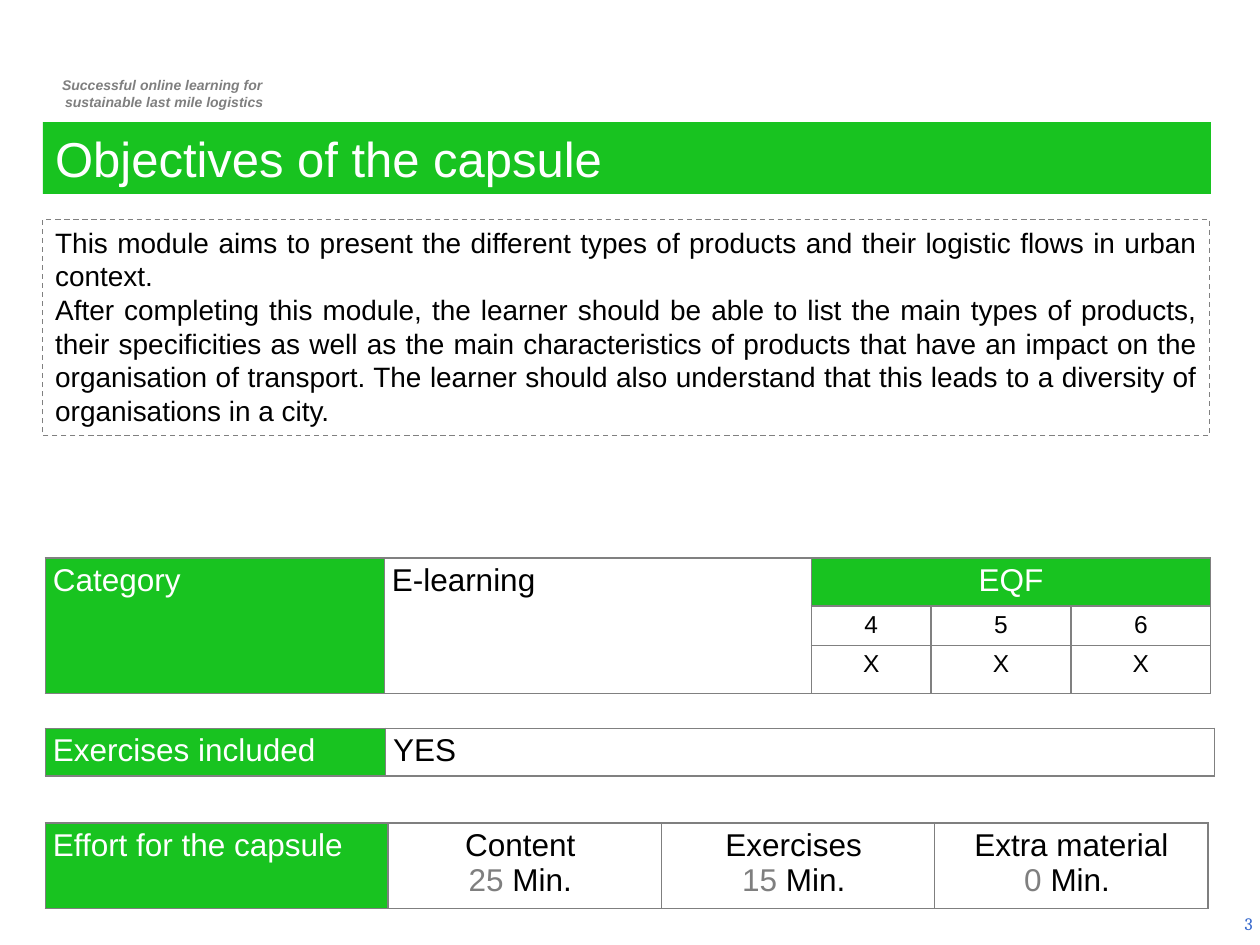
from lxml import etree
from pptx import Presentation, util as u
from pptx.dml.color import RGBColor
from pptx.enum import dml, shapes, text
from pptx.oxml import ns

COLORS = {"green": "18C320", "white": "FFFFFF", "black": "000000",
          "border": "808080", "grey": "7F7F7F", "blue": "3366CC"}
WIDTH, HEIGHT = u.Inches(10), u.Inches(7.5)
COLUMN, ROW = WIDTH / 100, HEIGHT / 100
LEFT, CENTER, RIGHT, JUSTIFY = (text.PP_ALIGN.LEFT, text.PP_ALIGN.CENTER,
                                text.PP_ALIGN.RIGHT, text.PP_ALIGN.JUSTIFY)


def place(box):
    left, top, width, height = box
    return int(left * COLUMN), int(top * ROW), int(width * COLUMN), int(height * ROW)


def rgb(name):
    return RGBColor.from_string(COLORS[name])


def style(span, size, color, font="Arial"):
    span.font.size = u.Pt(size)
    span.font.name = font
    span.font.color.rgb = rgb(color)


def write(frame, lines, size, color, align, font="Arial"):
    frame.word_wrap = True
    frame.text = "\n".join(lines)
    for para in frame.paragraphs:
        para.alignment = align
        for span in para.runs:
            style(span, size, color, font)


def add_tagline(page, box):
    frame = page.shapes.add_textbox(*place(box)).text_frame
    write(frame, ["Successful online learning for ", "sustainable last mile logistics"],
          8, "grey", CENTER)
    for para in frame.paragraphs:
        para.font.bold = para.font.italic = True
        for span in para.runs:
            span.font.bold = span.font.italic = True


def add_page_number(page, box):
    frame = page.shapes.add_textbox(*place(box)).text_frame
    frame.vertical_anchor = text.MSO_ANCHOR.MIDDLE
    write(frame, ["3"], 10, "blue", RIGHT, "Cambria")


def add_panel(page, box):
    panel = page.shapes.add_shape(shapes.MSO_SHAPE.RECTANGLE, *place(box))
    panel.shadow.inherit = False
    panel.text_frame.vertical_anchor = text.MSO_ANCHOR.TOP
    return panel


def add_title(page, box):
    panel = add_panel(page, box)
    panel.fill.solid()
    panel.fill.fore_color.rgb = rgb("green")
    panel.line.fill.background()
    write(panel.text_frame, ["Objectives of the capsule"], 28, "white", LEFT)


def add_objectives(page, box):
    panel = add_panel(page, box)
    panel.fill.background()
    panel.line.color.rgb = rgb("border")
    panel.line.width = u.Pt(0.75)
    panel.line.dash_style = dml.MSO_LINE.DASH
    write(panel.text_frame, [
        "This module aims to present the different types of products and their "
        "logistic flows in urban context.",
        "After completing this module, the learner should be able to list the main "
        "types of products, their specificities as well as the main characteristics "
        "of products that have an impact on the organisation of transport. The "
        "learner should also understand that this leads to a diversity of "
        "organisations in a city."], 16, "black", JUSTIFY)


def border_cell(cell, color, points):
    properties = cell._tc.get_or_add_tcPr()
    for side in ("a:lnL", "a:lnR", "a:lnT", "a:lnB"):
        line = etree.SubElement(properties, ns.qn(side), w=str(u.Pt(points)))
        fill = etree.SubElement(line, ns.qn("a:solidFill"))
        etree.SubElement(fill, ns.qn("a:srgbClr"), val=COLORS[color])


def add_grid(page, box, columns, rows, color="border", points=1):
    table = page.shapes.add_table(len(rows), len(columns), *place(box)).table
    table.first_row = table.horz_banding = False
    for column, share in zip(table.columns, columns):
        column.width = int(share * COLUMN)
    for row, share in zip(table.rows, rows):
        row.height = int(share * ROW)
    for cell in table.iter_cells():
        cell.margin_left = cell.margin_right = u.Inches(0.06)
        cell.margin_top = cell.margin_bottom = u.Inches(0.04)
        border_cell(cell, color, points)
        cell.fill.background()
    return table


def fill_heading(cell, label, align=JUSTIFY):
    cell.fill.solid()
    cell.fill.fore_color.rgb = rgb("green")
    write(cell.text_frame, [label], 18, "white", align)


def add_category(page, box):
    table = add_grid(page, box, [26.9, 33.9, 9.5, 11.1, 11.1], [4.93, 4.13, 4.93])
    for column in (0, 1):
        table.cell(0, column).merge(table.cell(2, column))
    table.cell(0, 2).merge(table.cell(0, 4))
    fill_heading(table.cell(0, 0), "Category")
    write(table.cell(0, 1).text_frame, ["E-learning"], 18, "black", JUSTIFY)
    fill_heading(table.cell(0, 2), "EQF", CENTER)
    for row, labels in enumerate(("456", "XXX"), 1):
        for column, label in enumerate(labels, 2):
            write(table.cell(row, column).text_frame, [label], 14, "black", CENTER)


def add_exercises(page, box):
    table = add_grid(page, box, [27, 65.8], [box[3]])
    fill_heading(table.cell(0, 0), "Exercises included")
    write(table.cell(0, 1).text_frame, ["YES"], 18, "black", JUSTIFY)


def add_effort(page, box):
    table = add_grid(page, box, [27.2] + [21.7] * 3, [box[3]], "grey", 0.91)
    fill_heading(table.cell(0, 0), "Effort for the capsule")
    efforts = [("Content\u00a0", 25), ("Exercises\u00a0", 15), ("Extra material", 0)]
    for column, (label, minutes) in enumerate(efforts, 1):
        frame = table.cell(0, column).text_frame
        write(frame, [label, f"{minutes} "], 18, "black", CENTER)
        para = frame.paragraphs[1]
        style(para.runs[0], 18, "grey")
        span = para.add_run()
        span.text = "Min.\u00a0"
        style(span, 18, "black")


def main():
    deck = Presentation()
    deck.slide_width, deck.slide_height = WIDTH, HEIGHT
    page = deck.slides.add_slide(deck.slide_layouts[6])
    add_tagline(page, (2.9, 7.47, 20.3, 4.93))
    add_page_number(page, (77.1, 95.07, 23.3, 5.33))
    add_title(page, (3.4, 12.93, 92.7, 7.6))
    add_objectives(page, (3.4, 23.2, 92.6, 22.93))
    add_category(page, (3.6, 59.07, 92.5, 14))
    add_exercises(page, (3.6, 77.07, 92.8, 5.07))
    add_effort(page, (3.6, 87.07, 92.3, 9.07))
    deck.save("out.pptx")


if __name__ == "__main__":
    main()
